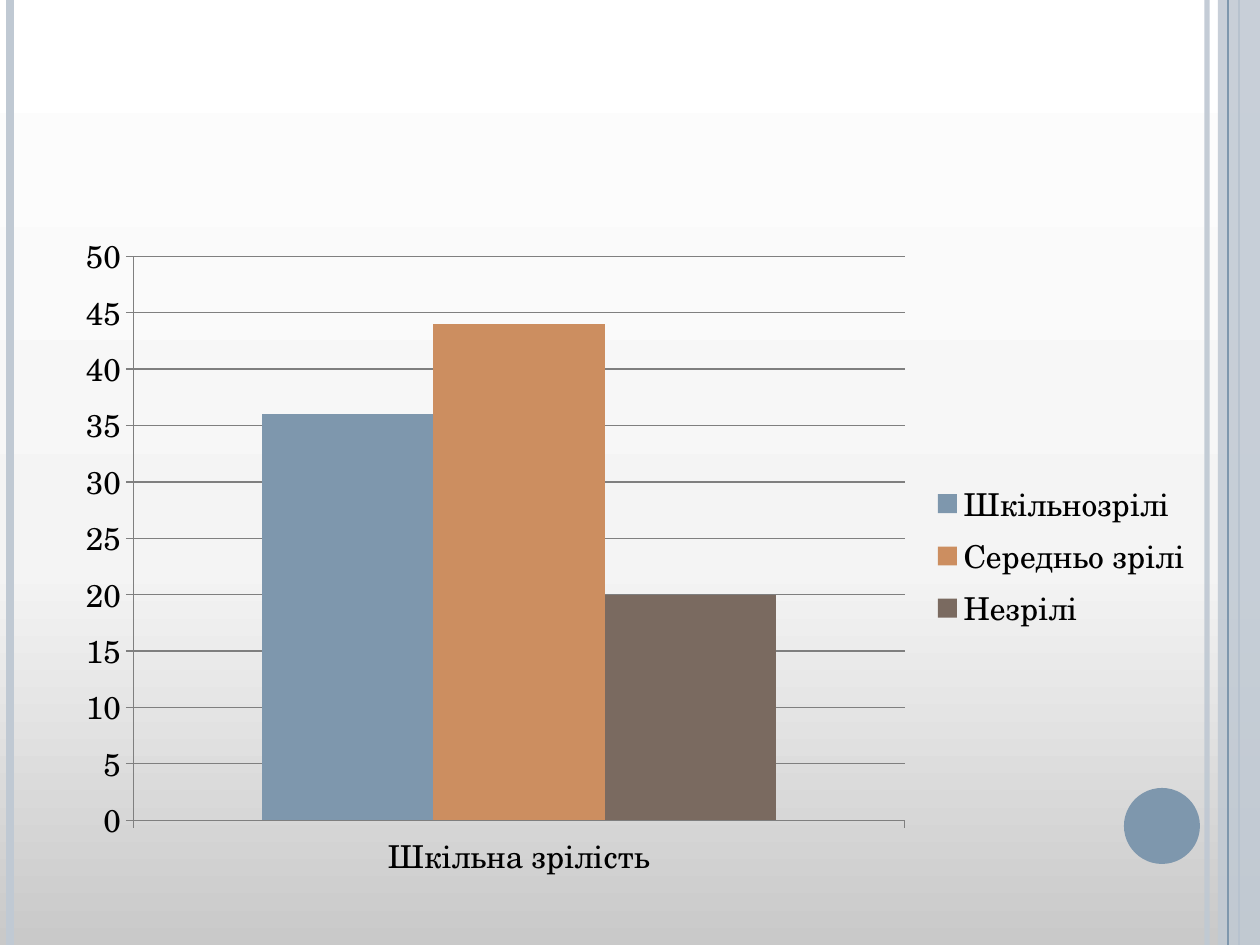
from dataclasses import dataclass

from lxml import etree
from pptx import Presentation
from pptx.chart.data import CategoryChartData
from pptx.dml.color import RGBColor
from pptx.enum.chart import XL_CHART_TYPE, XL_LEGEND_POSITION, XL_TICK_MARK
from pptx.enum.shapes import MSO_CONNECTOR, MSO_SHAPE
from pptx.oxml.ns import qn
from pptx.util import Emu, Pt

COLUMN_CLUSTERED = XL_CHART_TYPE.COLUMN_CLUSTERED
LEGEND_RIGHT = XL_LEGEND_POSITION.RIGHT
TICK_OUTSIDE = XL_TICK_MARK.OUTSIDE
TICK_NONE = XL_TICK_MARK.NONE
STRAIGHT = MSO_CONNECTOR.STRAIGHT
RECTANGLE = MSO_SHAPE.RECTANGLE
OVAL = MSO_SHAPE.OVAL

EMU_PER_PX = 914400 / 126
SLIDE_WIDTH, SLIDE_HEIGHT = 1260, 945


@dataclass(frozen=True)
class Theme:
    font: str = "TeX Gyre Schola"
    chart_size: int = 18
    text: str = "000000"
    grid: str = "7F7F7F"
    pale: str = "C0C9D3"
    blue: str = "7E97AD"
    series: tuple = ("7E97AD", "CC8E60", "7A6A60")
    background: tuple = ((0, "C9C9C9"), (40, "F4F4F4"), (100, "FFFFFF"))


THEME = Theme()
CATEGORIES = ["Шкільна зрілість"]
SERIES = [("Шкільнозрілі", [36]), ("Середньо зрілі", [44]), ("Незрілі", [20])]


def px(length):
    return Emu(round(length * EMU_PER_PX))


def rgb(color):
    return RGBColor.from_string(color)


def set_alpha(fill_element, percent):
    color = fill_element.find(".//" + qn("a:srgbClr"))
    etree.SubElement(color, qn("a:alpha"), val=str(percent * 1000))


def paint_background(slide):
    fill = slide.background.fill
    fill.gradient()
    fill.gradient_angle = 90
    stops = slide.background._cSld.find(".//" + qn("a:gsLst"))
    for stop in list(stops):
        stops.remove(stop)
    for position, color in THEME.background:
        stop = etree.SubElement(stops, qn("a:gs"), pos=str(position * 1000))
        etree.SubElement(stop, qn("a:srgbClr"), val=color)


def add_stripe(slide, x, top, height, color, weight, alpha=100):
    stripe = slide.shapes.add_connector(STRAIGHT, px(x), px(top), px(x), px(top + height))
    stripe.line.color.rgb = rgb(color)
    stripe.line.width = Pt(weight)
    properties = stripe._element.spPr
    if alpha < 100:
        set_alpha(properties, alpha)
    etree.SubElement(properties, qn("a:effectLst"))


def add_block(slide, kind, left, top, width, height, color):
    block = slide.shapes.add_shape(kind, px(left), px(top), px(width), px(height))
    block.shadow.inherit = False
    block.fill.solid()
    block.fill.fore_color.rgb = rgb(color)
    block.line.fill.background()
    return block


def add_frame(slide, left, top, width, height):
    right = left + width
    add_stripe(slide, right - 53, top, height, THEME.pale, 3, alpha=93)
    add_stripe(slide, left + 10, top, height, THEME.pale, 4.5)
    add_stripe(slide, right - 21, top, height, THEME.blue, 1.5)
    band = add_block(slide, RECTANGLE, right - 42, top, 42, height, THEME.pale)
    set_alpha(band._element.spPr, 87)
    add_stripe(slide, right - 32, top, height, THEME.blue, 0.75)
    add_block(slide, OVAL, right - 136, top + height - 157, 76, 76, THEME.blue)


def style_line(line):
    line.color.rgb = rgb(THEME.grid)
    line.width = Pt(0.75)


def add_maturity_chart(slide, left, top, width, height):
    data = CategoryChartData()
    data.categories = CATEGORIES
    for name, values in SERIES:
        data.add_series(name, values)
    chart = slide.shapes.add_chart(
        COLUMN_CLUSTERED, px(left), px(top), px(width), px(height), data
    ).chart
    chart.has_title = False
    chart.font.name = THEME.font
    chart.font.size = Pt(THEME.chart_size)
    chart.font.color.rgb = rgb(THEME.text)

    chart.has_legend = True
    chart.legend.position = LEGEND_RIGHT
    chart.legend.include_in_layout = False

    for axis in (chart.category_axis, chart.value_axis):
        axis.major_tick_mark = TICK_OUTSIDE
        axis.minor_tick_mark = TICK_NONE
        style_line(axis.format.line)
    value_axis = chart.value_axis
    value_axis.minimum_scale, value_axis.maximum_scale = 0, 50
    value_axis.major_unit = 5
    value_axis.has_major_gridlines = True
    style_line(value_axis.major_gridlines.format.line)

    plot = chart.plots[0]
    plot.gap_width = 150
    plot.vary_by_categories = False
    for series, color in zip(plot.series, THEME.series):
        series.format.fill.solid()
        series.format.fill.fore_color.rgb = rgb(color)


def main():
    presentation = Presentation()
    presentation.slide_width = px(SLIDE_WIDTH)
    presentation.slide_height = px(SLIDE_HEIGHT)
    slide = presentation.slides.add_slide(presentation.slide_layouts[6])
    paint_background(slide)
    add_frame(slide, 0, 0, SLIDE_WIDTH, SLIDE_HEIGHT)
    add_maturity_chart(slide, 63, 220, 1143, 672)
    presentation.save("out.pptx")


if __name__ == "__main__":
    main()
